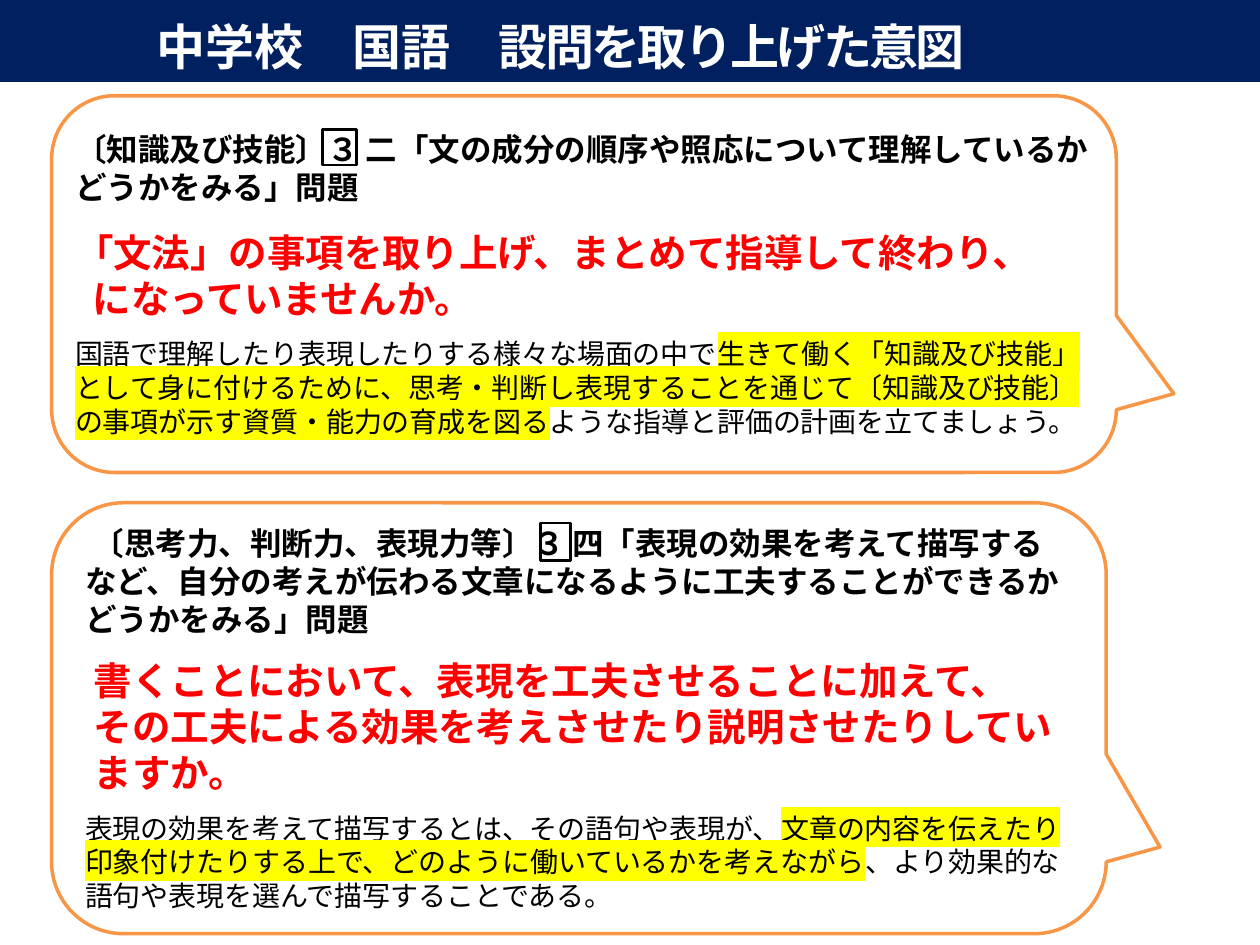
from lxml.etree import SubElement
from pptx import Presentation
from pptx.dml.color import RGBColor
from pptx.enum.lang import MSO_LANGUAGE_ID as Lang
from pptx.enum.shapes import MSO_SHAPE as Shape
from pptx.enum.text import MSO_ANCHOR as Anchor, PP_ALIGN as Align
from pptx.oxml.ns import qn
from pptx.util import Inches, Pt

COLORS = {"navy": "002060", "orange": "F79646", "white": "FFFFFF",
          "black": "000000", "red": "FF0000", "yellow": "FFFF00"}
FONT = "Noto Sans CJK JP"
COLS, ROWS = 100, 75
FORMATS = {
    "title": ({"size": Pt(28), "bold": True}, "white"),
    "heading": ({"size": Pt(18), "bold": True}, "black"),
    "question": ({"size": Pt(22), "bold": True}, "red"),
    "body": ({"size": Pt(16), "bold": False}, "black"),
}

TITLE = {"box": (0, -0.3, 100, 6.8), "insets": (0.1, 0.16, 1.2, 0.05),
         "runs": [("中学校　国語　", {}), ("設問を取り上げた意図", {"spacing": -1.5})]}

# Paragraph: format, runs, space before (pt), left margin and first-line indent (in)
CALLOUTS = [
    {"box": (4.1, 7.6, 84.5, 29.9), "tail": (0.554, 0.291, 0.167),
     "insets": (0.04, 0.05, 0.04, 0.05), "number": (21.5, 2.7, 2.7, 2.8),
     "paragraphs": [
         ("heading", [("〔知識及び技能〕３ 二「文の成分の順序や照応について"
                       "理解しているかどうかをみる」問題", {})], 0, 0, 0),
         ("question", [("「文法」の事項を取り上げ、まとめて指導して終わり、", {})], 13, 0, 0),
         ("question", [("になっていませんか。", {})], 0, 0.14, 0),
         ("body", [("国語で理解したり表現したりする様々な場面の中で", {}),
                   ("生きて働く「知識及び技能」として身に付けるために、思考・判断し"
                    "表現することを通じて〔知識及び技能〕の事項が示す資質・能力の育成を図る",
                    {"highlight": "yellow"}),
                   ("ような指導と評価の計画を立てましょう。", {})], 9, 0, 0)]},
    {"box": (4.1, 39.9, 83.7, 34.2), "tail": (0.551, 0.299, 0.167),
     "insets": (0.1, 0.05, 0.1, 0.05), "number": (38.8, 1.6, 2.4, 3),
     "paragraphs": [
         ("heading", [("〔思考力、判断力、表現力等〕３ 四「表現の効果を考えて描写するなど、"
                       "自分の考えが伝わる文章になるように工夫することができるか"
                       "どうかをみる」問題", {})], 0, 0, 0.06),
         ("question", [("書くことにおいて、表現を工夫させることに加えて、", {})], 11, 0.07, 0),
         ("question", [("その工夫による効果を考えさせたり説明させたりしてい", {})], 0, 0.07, 0),
         ("question", [("ますか。", {})], 0, 0.07, 0),
         ("body", [("表現の効果を考えて描写するとは、その語句や表現が、", {}),
                   ("文章の内容を伝えたり印象付けたりする上で、どのように働いているかを考えながら",
                    {"highlight": "yellow"}),
                   ("、より効果的な語句や表現を選んで描写することである。", {})], 9, 0, 0)]},
]


def rgb(name):
    return RGBColor.from_string(COLORS[name])


def add_box(s, kind, box, fill=None, line=None, width=0):
    """Add a preset shape whose box is given in grid columns and rows."""
    x, y, w, h = box
    sp = s.shapes.add_shape(kind, *(int(v) for v in (
        x * col, y * row, w * col, h * row)))
    sp.shadow.inherit = False
    for part, color in ((sp.fill, fill), (sp.line.fill, line)):
        if color:
            part.solid()
            part.fore_color.rgb = rgb(color)
        else:
            part.background()
    if line:
        sp.line.width = Pt(width)
    return sp


def set_frame(sp, insets):
    tf = sp.text_frame
    tf.word_wrap = True
    tf.vertical_anchor = Anchor.MIDDLE
    for side, value in zip(("left", "top", "right", "bottom"), insets):
        setattr(tf, f"margin_{side}", Inches(value))
    return tf


def add_run(p, text, style, highlight=None, spacing=None):
    r = p.add_run()
    r.text = text
    values, color = FORMATS[style]
    for name, value in values.items():
        setattr(r.font, name, value)
    r.font.language_id = Lang.JAPANESE
    r.font.color.rgb = rgb(color)
    rPr = r.font._element if hasattr(r.font, "_element") else r._r.get_or_add_rPr()
    if spacing is not None:
        rPr.set("spc", str(int(spacing * 100)))
    if highlight:
        mark = SubElement(rPr, qn("a:highlight"))
        SubElement(mark, qn("a:srgbClr"), val=COLORS[highlight])
    for tag in ("a:latin", "a:ea"):
        SubElement(rPr, qn(tag), typeface=FONT)


def add_title(s, title):
    sp = add_box(s, Shape.RECTANGLE, title["box"], "navy")
    p = set_frame(sp, title["insets"]).paragraphs[0]
    p.alignment = Align.CENTER
    for text, extra in title["runs"]:
        add_run(p, text, "title", **extra)


def add_callout(s, callout):
    """Add a speech bubble and the frame around its question number."""
    sp = add_box(s, Shape.ROUNDED_RECTANGULAR_CALLOUT, callout["box"], "white", "orange", 2)
    for i, value in enumerate(callout["tail"]):
        sp.adjustments[i] = value
    tf = set_frame(sp, callout["insets"])
    for i, (style, runs, before, left, indent) in enumerate(callout["paragraphs"]):
        p = tf.add_paragraph() if i else tf.paragraphs[0]
        p.alignment = Align.LEFT
        p.space_before = Pt(before)
        pPr = p._p.get_or_add_pPr()
        pPr.set("marL", str(Inches(left)))
        pPr.set("indent", str(Inches(indent)))
        for text, extra in runs:
            add_run(p, text, style, **extra)
    x, y, *_ = callout["box"]
    dx, dy, w, h = callout["number"]
    add_box(s, Shape.RECTANGLE, (x + dx, y + dy, w, h), line="black", width=1.5)


prs = Presentation()
prs.slide_width, prs.slide_height = Inches(10), Inches(7.5)
col, row = prs.slide_width / COLS, prs.slide_height / ROWS
slide = prs.slides.add_slide(prs.slide_layouts[6])
add_title(slide, TITLE)
for item in CALLOUTS:
    add_callout(slide, item)
prs.save("out.pptx")
